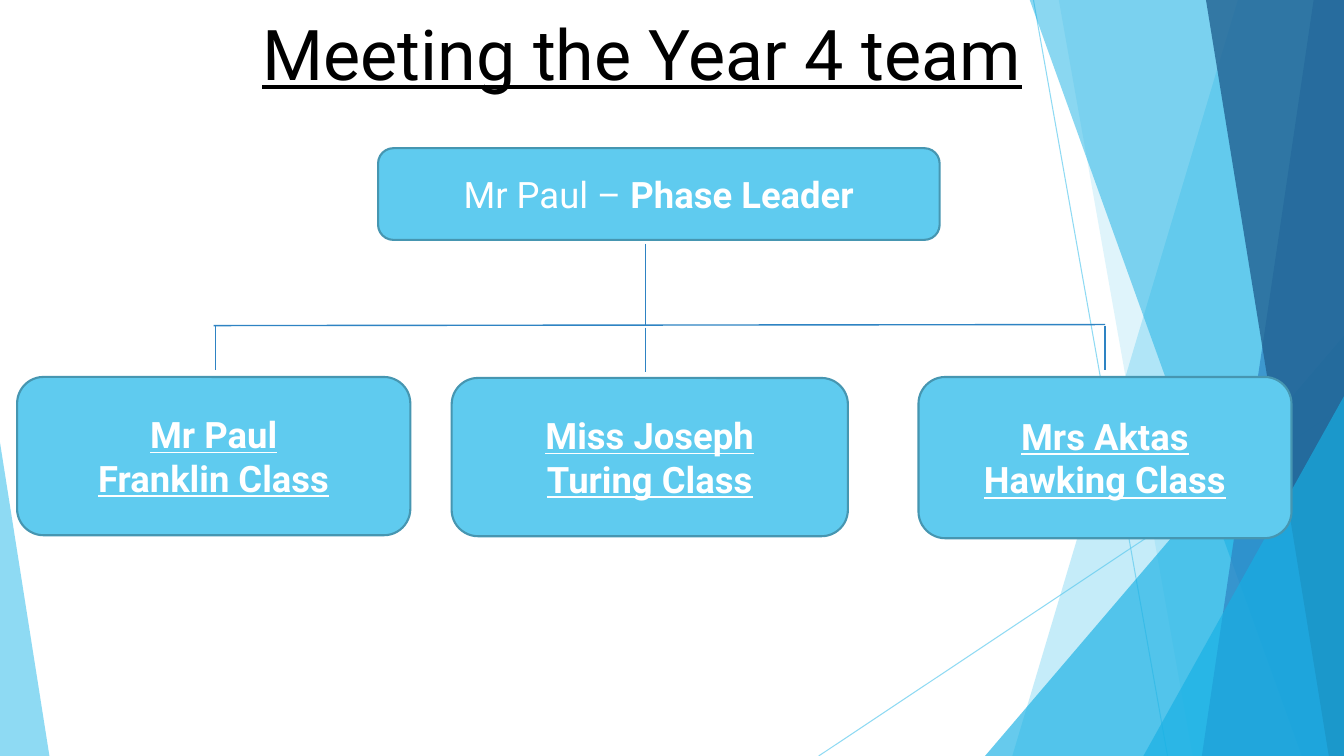
from lxml import etree
from pptx import Presentation
from pptx.dml.color import RGBColor
from pptx.enum.shapes import MSO_CONNECTOR, MSO_SHAPE
from pptx.enum.text import MSO_ANCHOR, PP_ALIGN
from pptx.oxml.ns import qn
from pptx.util import Inches, Pt

SKY = RGBColor(0x5F, 0xCB, 0xEF)
AZURE = RGBColor(0x17, 0xB0, 0xE4)
BLUE = RGBColor(0x2E, 0x83, 0xC3)
NAVY = RGBColor(0x22, 0x62, 0x92)
TEAL = RGBColor(0x46, 0x96, 0xB1)
WHITE = RGBColor(0xFF, 0xFF, 0xFF)
BLACK = RGBColor(0, 0, 0)
FONT = "Roboto"
WIDTH, HEIGHT, BAND_TOP = 13.33, 7.5, -0.01

# Slanted bands: top left x, bottom left x, colour, opacity in percent
BACK_BANDS = [(12.28, 10.04, SKY, 36), (10.5, 11.83, SKY, 20)]
FRONT_BANDS = [(10.21, 12.91, AZURE, 50), (13.03, 11.92, BLUE, 70),
               (11.96, 13.18, NAVY, 80)]

# Class boxes: left, top, width, height, teacher, class
CLASSES = [
    (4.48, 3.75, 3.93, 1.57, "Miss Joseph", "Turing Class"),
    (9.11, 3.74, 3.7, 1.6, "Mrs Aktas", "Hawking Class"),
    (0.17, 3.74, 3.9, 1.57, "Mr Paul", "Franklin Class"),
]

# Chart lines: start x, start y, end x, end y
BRANCHES = [
    (2.12, 3.23, 10.96, 3.22),
    (2.14, 3.23, 2.14, 3.67),
    (6.4, 3.25, 6.4, 3.69),
    (10.96, 3.23, 10.96, 3.67),
    (6.4, 2.42, 6.4, 3.22),
]


def set_opacity(element, percent):
    for color in element.spPr.iter(qn("a:srgbClr")):
        etree.SubElement(color, qn("a:alpha"), val=str(percent * 1000))


def paint(shape, color, opacity=100):
    shape.shadow.inherit = False
    shape.fill.solid()
    shape.fill.fore_color.rgb = color
    shape.line.fill.background()
    if opacity < 100:
        set_opacity(shape._element, opacity)


def add_band(slide, top_x, bottom_x, color, opacity):
    outline = slide.shapes.build_freeform(Inches(top_x), Inches(BAND_TOP))
    corners = [(WIDTH, BAND_TOP), (WIDTH, HEIGHT), (bottom_x, HEIGHT)]
    outline.add_line_segments([(Inches(x), Inches(y)) for x, y in corners])
    paint(outline.convert_to_shape(), color, opacity)


def add_wedge(slide, left, top, width, apex, color, opacity):
    wedge = slide.shapes.add_shape(
        MSO_SHAPE.ISOSCELES_TRIANGLE, Inches(left), Inches(top),
        Inches(width), Inches(HEIGHT - top))
    wedge.adjustments[0] = apex
    paint(wedge, color, opacity)


def add_line(slide, points, color, weight, opacity=100):
    line = slide.shapes.add_connector(
        MSO_CONNECTOR.STRAIGHT, *[Inches(value) for value in points])
    line.line.color.rgb = color
    line.line.width = Pt(weight)
    if opacity < 100:
        set_opacity(line._element, opacity)
    etree.SubElement(line._element.spPr, qn("a:effectLst"))


def write(paragraph, text, size=26, color=WHITE, bold=False, underline=False):
    paragraph.alignment = PP_ALIGN.CENTER
    run = paragraph.add_run()
    run.text = text
    run.font.name = FONT
    run.font.size = Pt(size)
    run.font.color.rgb = color
    run.font.bold = bold
    run.font.underline = underline


def add_box(slide, left, top, width, height):
    box = slide.shapes.add_shape(
        MSO_SHAPE.ROUNDED_RECTANGLE, Inches(left), Inches(top),
        Inches(width), Inches(height))
    paint(box, SKY)
    box.line.color.rgb = TEAL
    box.line.width = Pt(1.5)
    box.text_frame.word_wrap = True
    box.text_frame.vertical_anchor = MSO_ANCHOR.MIDDLE
    return box.text_frame


def add_backdrop(slide):
    add_line(slide, (10.25, 0, 11.58, HEIGHT), SKY, 0.75, opacity=70)
    add_line(slide, (WIDTH, 4.03, 8.12, HEIGHT), SKY, 0.75, opacity=70)
    for band in BACK_BANDS:
        add_band(slide, *band)
    add_wedge(slide, 9.77, 3.33, 3.56, 1, AZURE, 66)
    for band in FRONT_BANDS:
        add_band(slide, *band)
    add_wedge(slide, 11.34, 3.93, 1.99, 1, AZURE, 66)
    add_wedge(slide, 0, 4.39, 0.49, 0, SKY, 70)


def place_title(slide, text):
    title = slide.shapes.title
    title.left, title.top = Inches(1.67), Inches(0.05)
    title.width, title.height = Inches(9.4), Inches(1.44)
    title.text_frame.vertical_anchor = MSO_ANCHOR.TOP
    write(title.text_frame.paragraphs[0], text, size=50, color=BLACK,
          underline=True)
    # Bring the title in front of the backdrop
    slide.shapes._spTree.append(title._element)


def main():
    deck = Presentation()
    deck.slide_width, deck.slide_height = Inches(WIDTH), Inches(HEIGHT)
    slide = deck.slides.add_slide(deck.slide_layouts[5])

    add_backdrop(slide)
    place_title(slide, "Meeting the Year 4 team")

    # Class teachers
    for *place, teacher, class_name in CLASSES:
        frame = add_box(slide, *place)
        write(frame.paragraphs[0], teacher, bold=True, underline=True)
        write(frame.add_paragraph(), class_name, bold=True, underline=True)

    # Phase leader
    leader = add_box(slide, 3.75, 1.47, 5.57, 0.91).paragraphs[0]
    write(leader, "Mr Paul – ")
    write(leader, "Phase Leader", bold=True)

    # Lines from the leader to the classes
    for branch in BRANCHES:
        add_line(slide, branch, BLUE, 1)

    deck.save("out.pptx")


if __name__ == "__main__":
    main()
